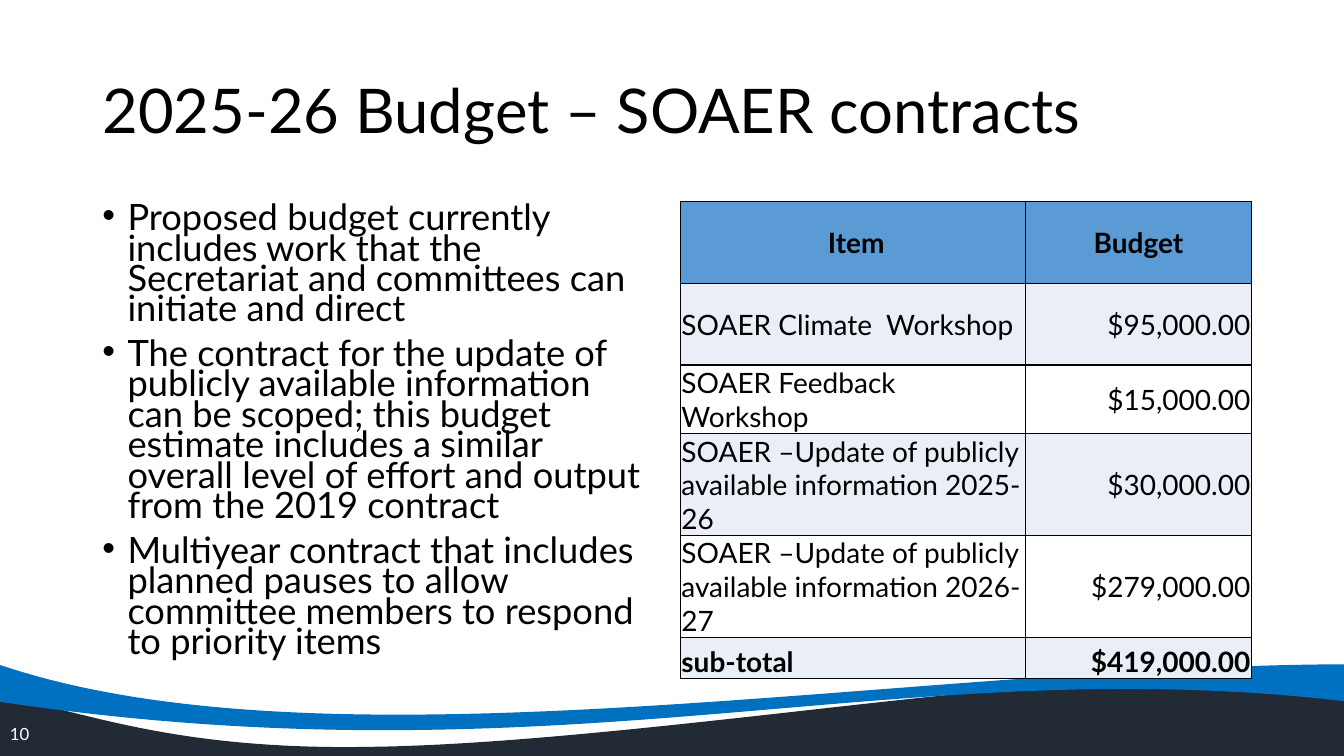
from pptx import Presentation
from pptx.dml.color import RGBColor
from pptx.enum.text import MSO_ANCHOR as Anchor, MSO_AUTO_SIZE as AutoSize, PP_ALIGN as Align
from pptx.oxml import parse_xml
from pptx.oxml.ns import nsdecls
from pptx.util import Pt


def color(value):
    return RGBColor.from_string(value)


class SlideBuilder:
    font = "Lato"
    black, white = "000000", "FFFFFF"
    header, band = "5B9BD5", "EAEFF7"
    navy, blue = "222A35", "0070C0"

    def __init__(self, prs):
        self.slide = prs.slides.add_slide(prs.slide_layouts[5])

    def style(self, p, size, fill, bold=False):
        for r in p.runs:
            r.font.name = self.font
            r.font.size = Pt(size)
            r.font.bold = bold
            r.font.color.rgb = color(fill)

    def wave(self, x, y, w, h, start, segments, fill):
        fb = self.slide.shapes.build_freeform(Pt(x), Pt(y))
        fb.add_line_segments([(Pt(x + w), Pt(y)), (Pt(x + w), Pt(y + h)), (Pt(x), Pt(y + h))])
        sp = fb.convert_to_shape()
        outline = sp._element.xpath(".//a:path")[0]
        for step in list(outline):
            outline.remove(step)
        for points in [[start], *segments]:
            tag = "moveTo" if points == [start] else "cubicBezTo" if len(points) == 3 else "lnTo"
            pts = "".join(f'<a:pt x="{Pt(px - x)}" y="{Pt(py - y)}"/>' for px, py in points)
            outline.append(parse_xml(f'<a:{tag} {nsdecls("a")}>{pts}</a:{tag}>'))
        outline.append(parse_xml(f'<a:close {nsdecls("a")}/>'))
        sp.shadow.inherit = False
        sp.fill.solid()
        sp.fill.fore_color.rgb = color(fill)
        sp.line.fill.background()

    def title(self, text, x, y, w, h):
        sp = self.slide.shapes.title
        sp.left, sp.top, sp.width, sp.height = Pt(x), Pt(y), Pt(w), Pt(h)
        tf = sp.text_frame
        tf.text = text
        tf.auto_size = AutoSize.NONE
        tf.vertical_anchor = Anchor.MIDDLE
        p = tf.paragraphs[0]
        p.alignment = Align.LEFT
        p.line_spacing = 0.9
        self.style(p, 44, self.black)

    def textbox(self, text, x, y, w, h, size, fill, anchor=Anchor.TOP):
        tf = self.slide.shapes.add_textbox(Pt(x), Pt(y), Pt(w), Pt(h)).text_frame
        tf.word_wrap = True
        tf.vertical_anchor = anchor
        tf.text = text
        for p in tf.paragraphs:
            self.style(p, size, fill)
        return tf

    def bullets(self, items, x, y, w, h, size):
        tf = self.textbox("\n".join(items), x, y, w, h, size, self.black)
        for i, p in enumerate(tf.paragraphs):
            p.line_spacing = 0.7
            p.space_before = Pt(10 if i else 0)
            pPr = p._p.get_or_add_pPr()
            pPr.set("marL", str(Pt(18)))
            pPr.set("indent", str(-Pt(18)))
            pPr.append(parse_xml(f'<a:buFont {nsdecls("a")} typeface="Arial"/>'))
            pPr.append(parse_xml(f'<a:buChar {nsdecls("a")} char="•"/>'))

    def cell(self, cell, text, fill, align, anchor, bold):
        cell.text = text
        cell.vertical_anchor = anchor
        cell.margin_left = cell.margin_right = cell.margin_top = Pt(0.75)
        cell.margin_bottom = 0
        p = cell.text_frame.paragraphs[0]
        p.alignment = align
        self.style(p, 20, self.black, bold)
        tcPr = cell._tc.get_or_add_tcPr()
        for side in ("lnL", "lnR", "lnT", "lnB"):
            tcPr.append(parse_xml(
                f'<a:{side} {nsdecls("a")} w="{Pt(1)}"><a:solidFill>'
                f'<a:srgbClr val="{self.black}"/></a:solidFill></a:{side}>'))
        cell.fill.solid()
        cell.fill.fore_color.rgb = color(fill)

    def table(self, rows, x, y, widths, heights, h):
        frame = self.slide.shapes.add_table(len(rows), len(widths), Pt(x), Pt(y), Pt(sum(widths)), Pt(h))
        tbl = frame.table
        for col, width in zip(tbl.columns, widths):
            col.width = Pt(width)
        for row, height in zip(tbl.rows, heights):
            row.height = Pt(height)
        frame.height = Pt(h)
        last = len(rows) - 1
        for i, row in enumerate(rows):
            fill = self.header if i == 0 else self.band if i % 2 else self.white
            anchor = Anchor.BOTTOM if i == last else Anchor.MIDDLE
            for j, text in enumerate(row):
                align = Align.CENTER if i == 0 else Align.RIGHT if j else Align.LEFT
                self.cell(tbl.cell(i, j), text, fill, align, anchor, i in (0, last))


def main():
    prs = Presentation()
    prs.slide_width, prs.slide_height = Pt(960), Pt(540)
    s = SlideBuilder(prs)

    s.wave(-1.4, 475.2, 964.1, 64.8, (-1.4, 500.4), [
        [(41, 498.2), (103, 536.4), (263.5, 533.5)],
        [(393.8, 532.1), (594.7, 503.3), (711.4, 493.2)],
        [(828, 483.1), (972.7, 466.6), (962.6, 480.2)],
        [(962, 500.4), (962, 519.8), (962, 540)],
        [(-0.7, 540)],
        [(-0.7, 527), (-1.4, 513.4), (-1.4, 500.4)],
    ], s.navy)
    s.wave(-1.4, 474.5, 964.1, 46.8, (-1.4, 474.5), [
        [(234.7, 555.1), (646.6, 475.2), (962, 474.5)],
        [(962, 501.1)],
        [(641.5, 463), (407.5, 562.3), (-1.4, 501.1)],
        [(-1.4, 474.5)],
    ], s.blue)

    s.title("2025-26 Budget – SOAER contracts", 66, 28.75, 828, 104.4)
    s.bullets([
        "Proposed budget currently includes work that the Secretariat and committees can initiate and direct",
        "The contract for the update of publicly available information can be scoped; "
        "this budget estimate includes a similar overall level of effort and output from the 2019 contract",
        "Multiyear contract that includes planned pauses to allow committee members to respond to priority items",
    ], 66, 143.75, 408, 342.6, 25.9)
    s.table([
        (" Item", "Budget"),
        ("SOAER Climate  Workshop", "$95,000.00"),
        ("SOAER Feedback Workshop", "$15,000.00"),
        ("SOAER –Update of publicly available information 2025-26", "$30,000.00"),
        ("SOAER –Update of publicly available information 2026-27", "$279,000.00"),
        ("sub-total", "$419,000.00"),
    ], 486, 143.75, [246.5, 161.5], [58.5] * 2 + [29.5] * 4, 320.4)
    s.textbox("10", 0, 510, 216, 28.75, 12, s.white, Anchor.MIDDLE)

    prs.save("out.pptx")


if __name__ == "__main__":
    main()
